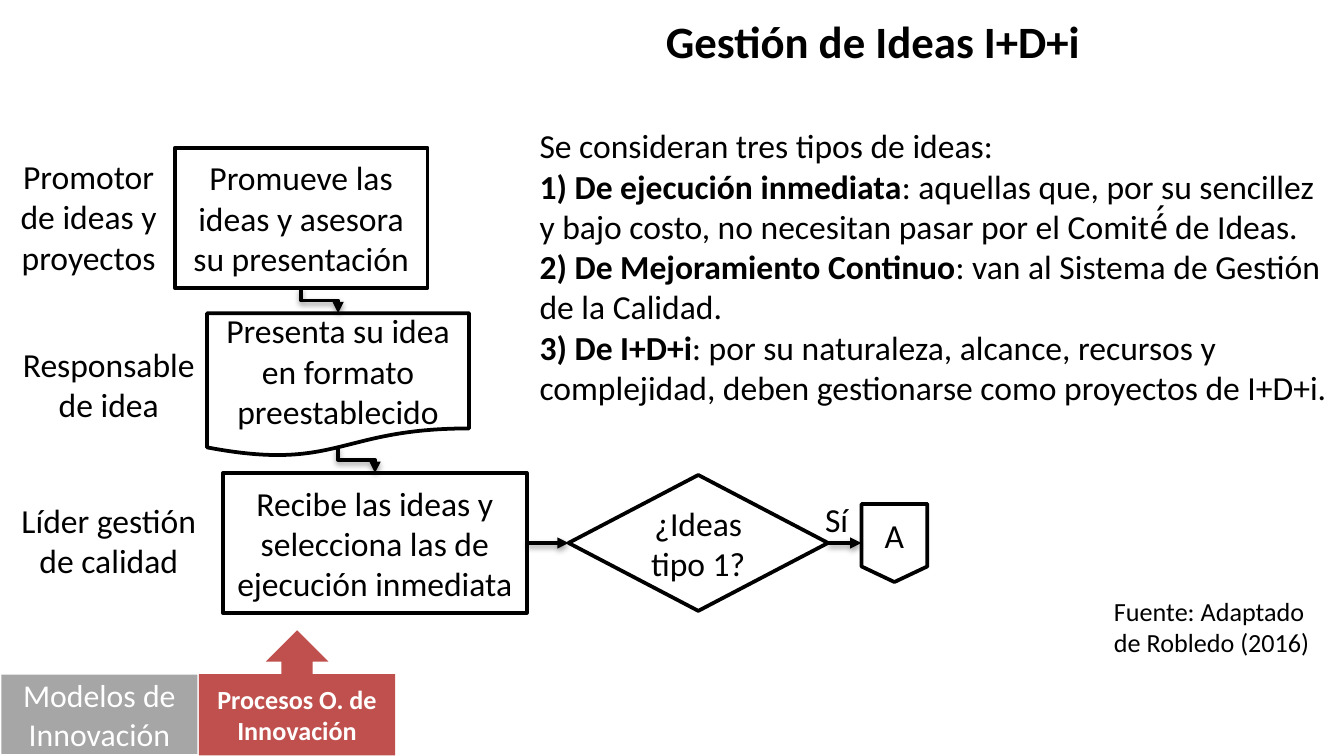
from lxml import etree
from pptx import Presentation
from pptx.dml.color import RGBColor
from pptx.enum.shapes import MSO_CONNECTOR, MSO_SHAPE
from pptx.enum.text import MSO_ANCHOR, MSO_AUTO_SIZE, PP_ALIGN
from pptx.oxml import parse_xml
from pptx.oxml.ns import nsdecls, qn
from pptx.util import Pt

BLACK = RGBColor(0x00, 0x00, 0x00)
WHITE = RGBColor(0xFF, 0xFF, 0xFF)
GRAY = RGBColor(0xA6, 0xA6, 0xA6)
RED = RGBColor(0xC0, 0x50, 0x4D)
FONT = "Calibri"

LEFT, CENTER = PP_ALIGN.LEFT, PP_ALIGN.CENTER
RECTANGLE = MSO_SHAPE.RECTANGLE
DOCUMENT = MSO_SHAPE.FLOWCHART_DOCUMENT
DECISION = MSO_SHAPE.FLOWCHART_DECISION
OFFPAGE = MSO_SHAPE.FLOWCHART_OFFPAGE_CONNECTOR
ARROW_CALLOUT = MSO_SHAPE.UP_ARROW_CALLOUT
STRAIGHT, ELBOW = MSO_CONNECTOR.STRAIGHT, MSO_CONNECTOR.ELBOW

TOP_SIDE, LEFT_SIDE, BOTTOM_SIDE, RIGHT_SIDE = range(4)
DOCUMENT_BOTTOM = 0.93  # share of its height where the wave crosses the middle

SHADOW = (
    f'<a:effectLst {nsdecls("a")}>'
    '<a:outerShdw blurRad="39370" dist="20320" dir="5400000" rotWithShape="0">'
    '<a:srgbClr val="000000"><a:alpha val="38000"/></a:srgbClr>'
    "</a:outerShdw></a:effectLst>"
)

# Text of each paragraph as (text, bold) spans
IDEA_TYPES = [
    [("Se consideran tres tipos de ideas:", False)],
    [("1) De ejecución inmediata", True),
     (": aquellas que, por su sencillez y bajo costo, "
      "no necesitan pasar por el Comité́ de Ideas.", False)],
    [("2) De Mejoramiento Continuo", True),
     (": van al Sistema de Gestión de la Calidad.", False)],
    [("3) De I+D+i", True),
     (": por su naturaleza, alcance, recursos y complejidad, "
      "deben gestionarse como proyectos de I+D+i.", False)],
]

# Role, then left, top, width and height
ROLES = [
    ("Promotor de ideas y proyectos", (0.7, 80, 93.6, 72.7)),
    ("Responsable de idea", (0.7, 180.7, 115.2, 51)),
    ("Líder gestión de calidad", (0.7, 264.2, 115.2, 51)),
]


def points(bounds):
    return [Pt(value) for value in bounds]


def style_span(span, size, color=BLACK, bold=False):
    span.font.name = FONT
    span.font.size = Pt(size)
    span.font.bold = bold
    span.font.color.rgb = color


def write(frame, text, size, color=BLACK, bold=False, align=CENTER):
    frame.text = text
    para = frame.paragraphs[0]
    para.alignment = align
    style_span(para.runs[0], size, color, bold)


def add_title(page, text, bounds):
    title = page.shapes.title
    title.left, title.top, title.width, title.height = points(bounds)
    frame = title.text_frame
    frame.vertical_anchor = MSO_ANCHOR.TOP
    frame.auto_size = MSO_AUTO_SIZE.SHAPE_TO_FIT_TEXT
    write(frame, text, 24, bold=True)


def add_text_box(page, bounds, wrap=True):
    frame = page.shapes.add_textbox(*points(bounds)).text_frame
    frame.word_wrap = wrap
    frame.auto_size = MSO_AUTO_SIZE.SHAPE_TO_FIT_TEXT
    return frame


def add_label(page, text, bounds, size=18, align=CENTER, wrap=True):
    write(add_text_box(page, bounds, wrap), text, size, align=align)


def add_explanation(page, paragraphs, bounds):
    frame = add_text_box(page, bounds)
    for index, spans in enumerate(paragraphs):
        para = frame.add_paragraph() if index else frame.paragraphs[0]
        for text, bold in spans:
            span = para.add_run()
            span.text = text
            style_span(span, 18, bold=bold)


def add_block(page, kind, text, bounds, size=18, fill=WHITE, color=BLACK,
              bold=False, outlined=True):
    block = page.shapes.add_shape(kind, *points(bounds))
    block.shadow.inherit = False
    block.fill.solid()
    block.fill.fore_color.rgb = fill
    if outlined:
        block.line.color.rgb = BLACK
        block.line.width = Pt(2)
    else:
        block.line.fill.background()
    block.text_frame.vertical_anchor = MSO_ANCHOR.MIDDLE
    block.text_frame.word_wrap = True
    write(block.text_frame, text, size, color, bold)
    return block


def add_arrow(page, kind, source, source_side, target, target_side):
    arrow = page.shapes.add_connector(kind, 0, 0, 0, 0)
    arrow.begin_connect(source, source_side)
    arrow.end_connect(target, target_side)
    arrow.line.color.rgb = BLACK
    arrow.line.width = Pt(2)
    line = arrow.line._get_or_add_ln()
    etree.SubElement(line, qn("a:tailEnd"), type="triangle")
    arrow._element.spPr.append(parse_xml(SHADOW))
    return arrow


def add_down_arrow(page, source, target, bottom=1):
    """Elbow from a block's bottom to the next one's top, by a quarter turn."""
    arrow = add_arrow(page, ELBOW, source, BOTTOM_SIDE, target, TOP_SIDE)
    start_x = source.left + source.width // 2
    start_y = source.top + int(source.height * bottom)
    across = target.left + target.width // 2 - start_x
    down = target.top - start_y
    arrow.left = start_x + (across - down) // 2
    arrow.top = start_y + (down - across) // 2
    arrow.width, arrow.height = down, across
    frame = arrow._element.spPr.find(qn("a:xfrm"))
    frame.set("rot", "16200000")
    frame.set("flipH", "1")


def main():
    deck = Presentation()
    deck.slide_width, deck.slide_height = Pt(720), Pt(405)
    page = deck.slides.add_slide(deck.slide_layouts[5])

    # Title, explanation and source
    add_title(page, "Gestión de Ideas I+D+i", (215.3, 3.6, 504.7, 36))
    add_explanation(page, IDEA_TYPES, (282, 63.5, 438, 160))
    add_label(page, "Fuente: Adaptado de Robledo (2016)",
              (589.7, 315.4, 131, 41), size=14, align=LEFT)

    # Roles
    for role, bounds in ROLES:
        add_label(page, role, bounds)

    # Process steps
    promote = add_block(page, RECTANGLE,
                        "Promueve las ideas y asesora su presentación",
                        (93.6, 79.2, 135.4, 75))
    present = add_block(page, DOCUMENT,
                        "Presenta su idea en formato preestablecido",
                        (110.9, 167.8, 140.4, 77))
    receive = add_block(page, RECTANGLE,
                        "Recibe las ideas y selecciona las de ejecución inmediata",
                        (119.5, 253.4, 162.7, 75))
    decide = add_block(page, DECISION, "¿Ideas tipo 1?",
                       (304.6, 254.5, 139, 72.8))
    onward = add_block(page, OFFPAGE, "A", (461.5, 270, 35.3, 41.8))

    # Flow
    add_down_arrow(page, promote, present)
    add_down_arrow(page, present, receive, DOCUMENT_BOTTOM)
    add_arrow(page, STRAIGHT, receive, RIGHT_SIDE, decide, LEFT_SIDE)
    add_arrow(page, STRAIGHT, decide, RIGHT_SIDE, onward, LEFT_SIDE)
    add_label(page, "Sí", (434.9, 263.5, 27.4, 29), align=LEFT, wrap=False)

    # Section markers
    add_block(page, RECTANGLE, "Modelos de Innovación",
              (0.7, 361.4, 105.1, 42.5), size=17, fill=GRAY, color=WHITE,
              outlined=False)
    add_block(page, ARROW_CALLOUT, "Procesos O. de Innovación",
              (106.6, 337.7, 105.1, 67), size=14, fill=RED, color=WHITE,
              bold=True, outlined=False)

    deck.save("out.pptx")


if __name__ == "__main__":
    main()
